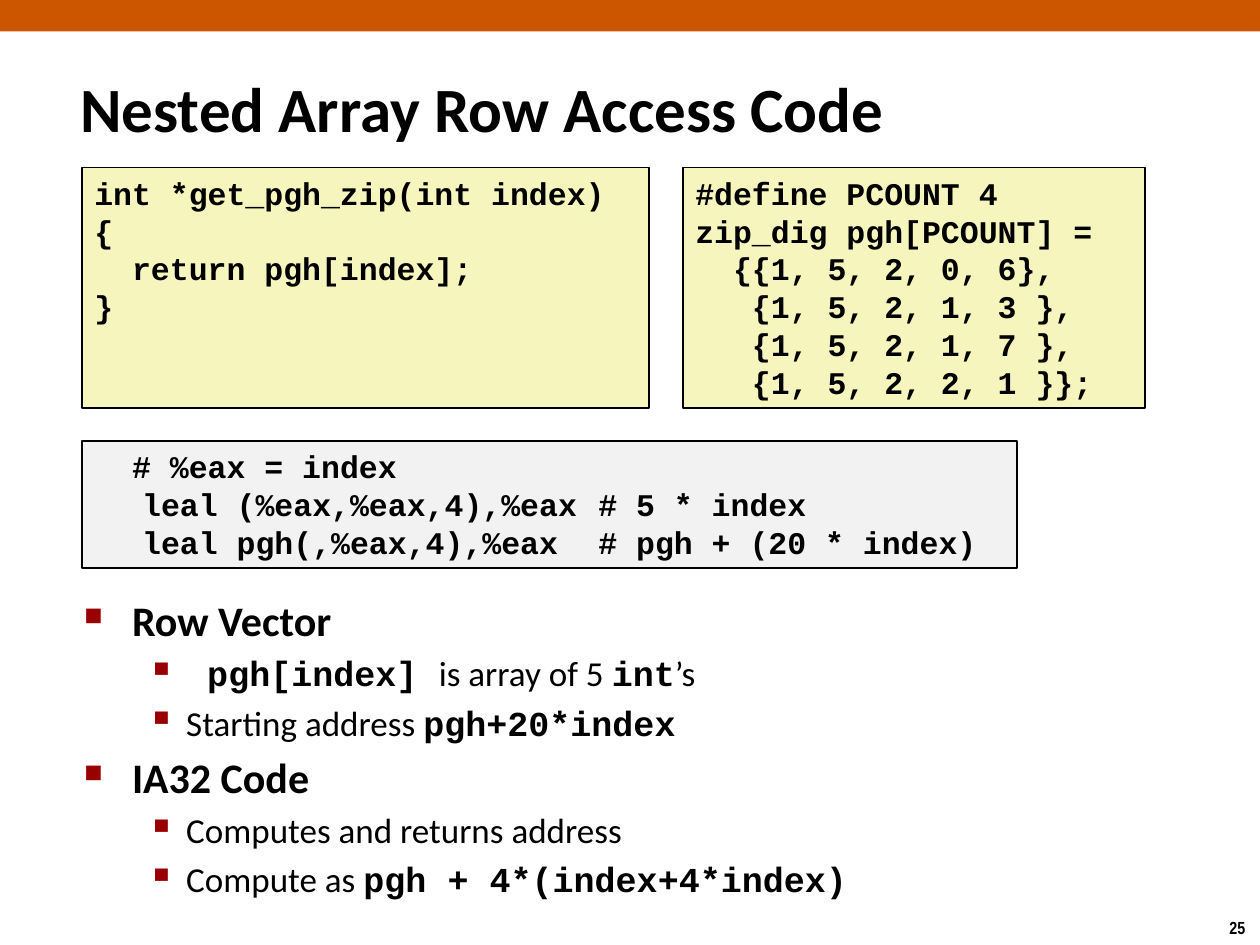
import pptx
import pptx.dml.color
import pptx.enum.shapes
import pptx.enum.text
import pptx.oxml
import pptx.oxml.ns
import pptx.util
from pptx.util import Inches

BLACK = pptx.dml.color.RGBColor(0x00, 0x00, 0x00)
ORANGE = pptx.dml.color.RGBColor(0xCC, 0x55, 0x00)
YELLOW = pptx.dml.color.RGBColor(0xF6, 0xF5, 0xBD)
GRAY = pptx.dml.color.RGBColor(0xF2, 0xF2, 0xF2)
DARK_RED = pptx.dml.color.RGBColor(0x99, 0x00, 0x00)
CODE_FONT = "Courier New"
TEXT_FONT = "Calibri"
ANCHOR = pptx.enum.text.MSO_ANCHOR
NAMESPACE = pptx.oxml.ns.nsdecls("a")


def set_font(font, name, size, bold):
    font.name = name
    font.size = pptx.util.Pt(size)
    font.bold = bold
    font.color.rgb = BLACK


def add_rectangle(left, top, width, height, fill):
    rectangle = slide.shapes.add_shape(
        pptx.enum.shapes.MSO_SHAPE.RECTANGLE,
        Inches(left), Inches(top), Inches(width), Inches(height))
    rectangle.shadow.inherit = False
    rectangle.fill.solid()
    rectangle.fill.fore_color.rgb = fill
    return rectangle


deck = pptx.Presentation()
deck.slide_width = Inches(10)
deck.slide_height = Inches(7.5)
slide = deck.slides.add_slide(deck.slide_layouts[6])

# Top band
band = add_rectangle(0, 0, 10, 0.25, ORANGE)
band.line.fill.background()

# Page number
page_number = slide.shapes.add_textbox(Inches(9.66), Inches(7.23), Inches(0.34), Inches(0.27))
page_number.text_frame.word_wrap = False
page_number.text_frame.text = "25"
set_font(page_number.text_frame.paragraphs[0].font, "Arial Narrow", 10, True)

# Title
title = slide.shapes.add_textbox(Inches(0.54), Inches(0.54), Inches(8.36), Inches(0.63))
title.text_frame.word_wrap = True
title.text_frame.vertical_anchor = ANCHOR.MIDDLE
title.text_frame.text = "Nested Array Row Access Code"
set_font(title.text_frame.paragraphs[0].font, TEXT_FONT, 36, True)

# Code boxes: left, top, width, height, fill, tab stops, lines
code_boxes = [
    (0.65, 1.33, 4.5, 1.91, YELLOW, [], [
        "int *get_pgh_zip(int index)",
        "{",
        "  return pgh[index];",
        "}"]),
    (0.65, 3.5, 7.42, 1.01, GRAY, [0.38, 2.88], [
        "  # %eax = index",
        "\tleal (%eax,%eax,4),%eax\t# 5 * index",
        "\tleal pgh(,%eax,4),%eax\t# pgh + (20 * index)"]),
    (5.42, 1.33, 3.67, 1.91, YELLOW, [], [
        "#define PCOUNT 4",
        "zip_dig pgh[PCOUNT] =",
        "  {{1, 5, 2, 0, 6},",
        "   {1, 5, 2, 1, 3 },",
        "   {1, 5, 2, 1, 7 },",
        "   {1, 5, 2, 2, 1 }};"]),
]
for left, top, width, height, fill, tab_stops, lines in code_boxes:
    code_box = add_rectangle(left, top, width, height, fill)
    code_box.line.color.rgb = BLACK
    code_box.line.width = pptx.util.Pt(1)
    code_box.text_frame.vertical_anchor = ANCHOR.TOP
    code_box.text_frame.word_wrap = True
    code_box.text_frame.text = "\n".join(lines)
    for line in code_box.text_frame.paragraphs:
        line.alignment = pptx.enum.text.PP_ALIGN.LEFT
        if tab_stops:
            stops = "".join(f'<a:tab pos="{Inches(stop)}" algn="l"/>' for stop in tab_stops)
            line._p.get_or_add_pPr().append(
                pptx.oxml.parse_xml(f"<a:tabLst {NAMESPACE}>{stops}</a:tabLst>"))
        set_font(line.font, CODE_FONT, 18, True)

# Bullet list: level, then (text, is code) pieces
bullets = [
    (0, [("Row Vector", False)]),
    (1, [(" pgh[index] ", True), ("is array of 5 ", False), ("int", True), ("’s", False)]),
    (1, [("Starting address ", False), ("pgh+20*index", True)]),
    (0, [("IA32 Code", False)]),
    (1, [("Computes and returns address", False)]),
    (1, [("Compute as ", False), ("pgh + 4*(index+4*index)", True)]),
]
# Per level: size, margin, indent, bullet, bullet size in percent
level_styles = [(24, 0.38, -0.38, "■", 60), (20, 0.81, -0.31, "▪", 110)]

body = slide.shapes.add_textbox(Inches(0.57), Inches(4.67), Inches(8.1), Inches(2.67))
body.text_frame.word_wrap = True
for number, (level, pieces) in enumerate(bullets):
    size, margin, indent, mark, mark_percent = level_styles[level]
    item = body.text_frame.paragraphs[0] if number == 0 else body.text_frame.add_paragraph()
    item.level = level
    item.space_before = pptx.util.Pt(size * 0.2)
    properties = item._p.get_or_add_pPr()
    properties.set("marL", str(Inches(margin)))
    properties.set("indent", str(Inches(indent)))
    for element in (
            f'<a:buClr {NAMESPACE}><a:srgbClr val="{DARK_RED}"/></a:buClr>',
            f'<a:buSzPct {NAMESPACE} val="{mark_percent * 1000}"/>',
            f'<a:buChar {NAMESPACE} char="{mark}"/>'):
        properties.append(pptx.oxml.parse_xml(element))
    set_font(item.font, TEXT_FONT, size, level == 0)
    for text, is_code in pieces:
        run = item.add_run()
        run.text = text
        if is_code:
            set_font(run.font, CODE_FONT, size, True)

deck.save("out.pptx")
